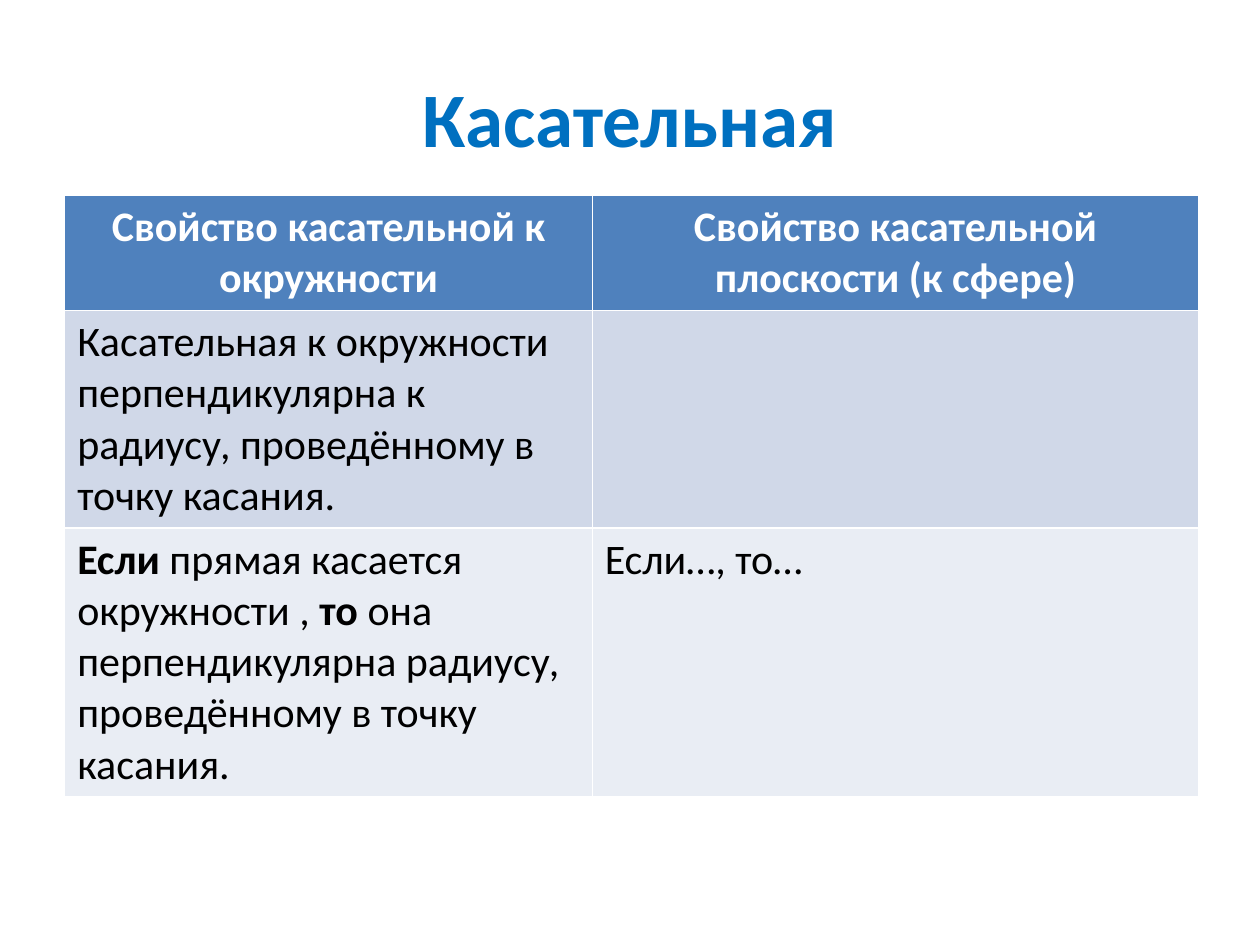
"""Build a slide comparing tangent properties of a circle and a sphere."""
from dataclasses import dataclass

from pptx import Presentation
from pptx.dml.color import RGBColor
from pptx.enum.text import MSO_ANCHOR, PP_ALIGN
from pptx.util import Pt

CENTER, LEFT = PP_ALIGN.CENTER, PP_ALIGN.LEFT
MIDDLE = MSO_ANCHOR.MIDDLE


@dataclass(frozen=True)
class Theme:
    font: str = "Calibri"
    title_size: int = 44
    cell_size: int = 24
    title: str = "0070C0"
    header_text: str = "FFFFFF"
    body_text: str = "000000"


@dataclass(frozen=True)
class Run:
    text: str
    bold: bool = False


@dataclass(frozen=True)
class Row:
    height: float
    fill: str
    color: str
    align: PP_ALIGN
    cells: tuple[tuple[Run, ...], ...]


THEME = Theme()
COLUMN_WIDTHS = (301.5, 346.5)
ROWS = (
    Row(65, "4F81BD", THEME.header_text, CENTER, (
        (Run("Свойство касательной к окружности", True),),
        (Run("Свойство касательной плоскости (к сфере)", True),),
    )),
    Row(124, "D0D8E8", THEME.body_text, LEFT, (
        (Run("Касательная к окружности перпендикулярна к радиусу, "
             "проведённому в точку касания."),),
        (),
    )),
    Row(153, "E9EDF4", THEME.body_text, LEFT, (
        (Run("Если", True), Run(" прямая касается окружности , "),
         Run("то", True),
         Run(" она перпендикулярна радиусу, проведённому в точку касания.")),
        (Run("Если…, то…"),),
    )),
)


def style_paragraph(p, size: float, color: str, align: PP_ALIGN) -> None:
    """Apply the shared font and the given look to a paragraph."""
    p.alignment = align
    p.font.name = THEME.font
    p.font.size = Pt(size)
    p.font.color.rgb = RGBColor.from_string(color)


def add_title(slide, text: str) -> None:
    """Fill and place the title placeholder."""
    sp = slide.shapes.title
    sp.left, sp.top, sp.width, sp.height = Pt(36), Pt(21.6), Pt(648), Pt(90)
    tf = sp.text_frame
    tf.text = text
    tf.vertical_anchor = MIDDLE
    p = tf.paragraphs[0]
    style_paragraph(p, THEME.title_size, THEME.title, CENTER)
    p.font.bold = True


def fill_cell(cell, row: Row, runs: tuple[Run, ...]) -> None:
    """Colour a table cell and write its runs."""
    cell.fill.solid()
    cell.fill.fore_color.rgb = RGBColor.from_string(row.fill)
    p = cell.text_frame.paragraphs[0]
    style_paragraph(p, THEME.cell_size, row.color, row.align)
    for run in runs:
        r = p.add_run()
        r.text = run.text
        r.font.bold = run.bold


def add_comparison(slide, rows: tuple[Row, ...]) -> None:
    """Add the table of tangent properties."""
    table = slide.shapes.add_table(
        len(rows), len(COLUMN_WIDTHS), Pt(37), Pt(111.6),
        Pt(sum(COLUMN_WIDTHS)), Pt(sum(row.height for row in rows))).table
    for column, width in zip(table.columns, COLUMN_WIDTHS):
        column.width = Pt(width)
    for table_row, row in zip(table.rows, rows):
        table_row.height = Pt(row.height)
        for cell, runs in zip(table_row.cells, row.cells):
            fill_cell(cell, row, runs)


def main() -> None:
    """Build and save the presentation."""
    prs = Presentation()
    prs.slide_width, prs.slide_height = Pt(720), Pt(540)
    slide = prs.slides.add_slide(prs.slide_layouts[5])
    add_title(slide, "Касательная")
    add_comparison(slide, ROWS)
    prs.save("out.pptx")


if __name__ == "__main__":
    main()
